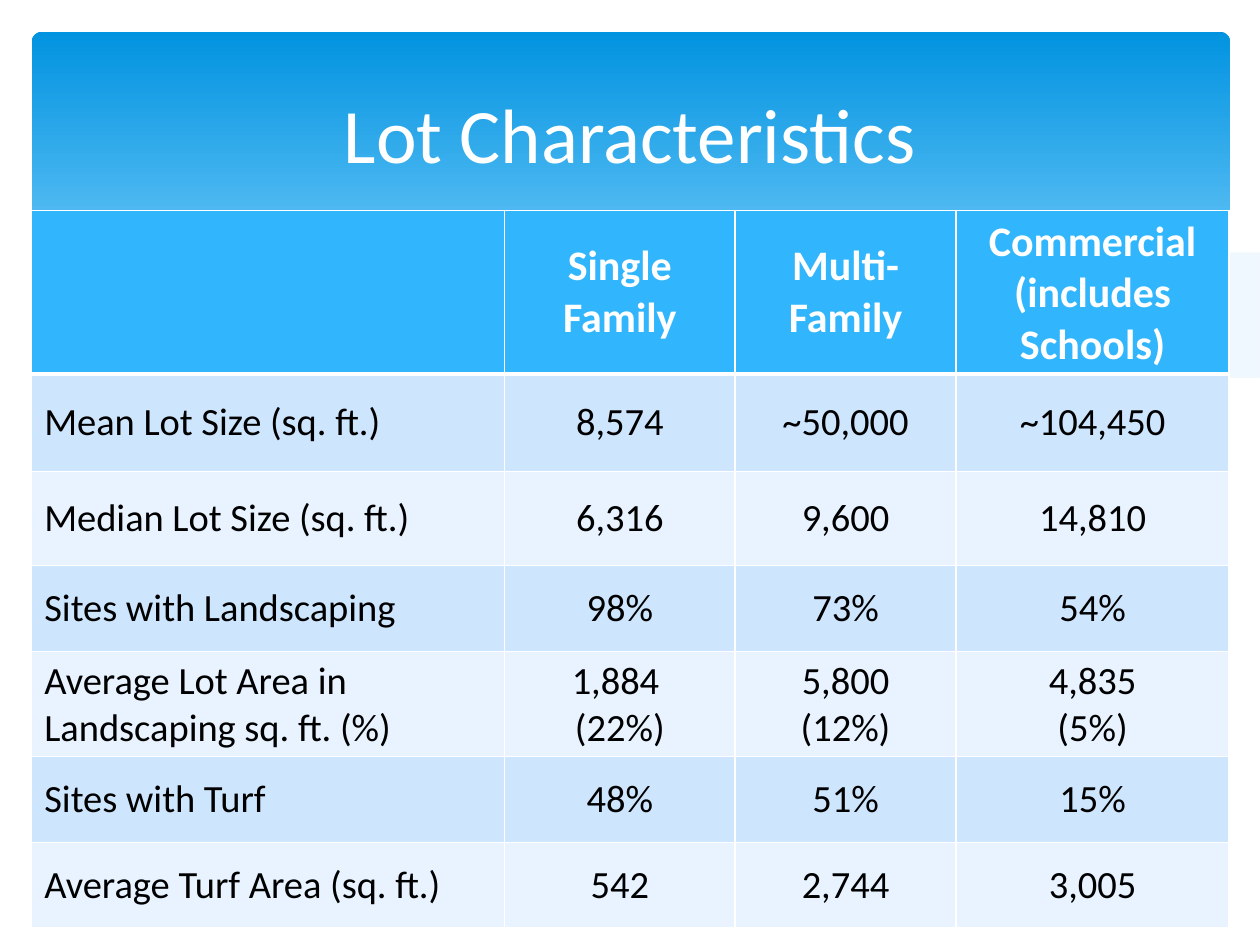
"""Build the Lot Characteristics slide."""
from dataclasses import dataclass
from typing import Optional

import pptx
import pptx.dml.color
import pptx.enum.shapes
import pptx.enum.text
import pptx.oxml
import pptx.oxml.ns
import pptx.util
from lxml import etree

Cm = pptx.util.Cm
Pt = pptx.util.Pt
qn = pptx.oxml.ns.qn
ALIGN = pptx.enum.text.PP_ALIGN
MIDDLE = pptx.enum.text.MSO_ANCHOR.MIDDLE

COLORS = {
    "white": "FFFFFF",
    "black": "000000",
    "banner_top": "0293E0",
    "banner_bottom": "83D3FE",
    "wave": "C6E7FC",
    "header": "31B6FD",
    "band_dark": "CEE5FE",
    "band_light": "E8F3FF",
}
FONT = "Calibri"
WAVE_UNIT = Cm(2.54)


@dataclass
class Wave:
    """An outline in wave units, filled or only stroked."""
    points: list[tuple[float, float]]
    fill: Optional[str] = None
    alpha: int = 100


@dataclass
class RowStyle:
    """The look of one table row."""
    fill: str
    color: str
    size: int
    bold: bool
    top: int
    bottom: int


WAVES = [
    Wave([(9.76, 2), (9.48, 2.04), (9.06, 2.13), (8.61, 2.23), (8.05, 2.37), (7.53, 2.48),
          (7.06, 2.57), (6.61, 2.65), (6.91, 2.69), (7.32, 2.74), (7.69, 2.77), (8.03, 2.78),
          (8.44, 2.77), (8.81, 2.73), (9.13, 2.67), (9.42, 2.59), (9.63, 2.52), (9.76, 2.47)],
         "wave", 29),
    Wave([(8.93, 2.73), (8.37, 2.65), (7.75, 2.54), (7.06, 2.4), (6.29, 2.22), (5.84, 2.11),
          (5.41, 2.03), (5.02, 1.96), (4.65, 1.91), (4.2, 1.87), (3.8, 1.85), (3.44, 1.86),
          (3.13, 1.88), (2.86, 1.91), (3.23, 1.96), (3.62, 2.03), (4.04, 2.11), (4.49, 2.22),
          (5.3, 2.4), (5.84, 2.52), (6.34, 2.61), (6.8, 2.68), (7.22, 2.74), (7.61, 2.77),
          (7.96, 2.78), (8.38, 2.78), (8.67, 2.76)],
         "wave", 40),
    Wave([(3.09, 1.95), (3.28, 1.92), (3.53, 1.89), (3.87, 1.87), (4.33, 1.87), (4.89, 1.9),
          (5.33, 1.94), (5.82, 2), (6.36, 2.08), (6.95, 2.19), (7.6, 2.33), (8.31, 2.51),
          (9.07, 2.72)]),
    Wave([(6.13, 2.57), (6.53, 2.46), (6.95, 2.35), (7.48, 2.23), (8.06, 2.1), (8.66, 1.99),
          (9.1, 1.92), (9.51, 1.87), (9.75, 1.85)]),
    Wave([(9.77, 2.46), (9.5, 2.56), (9.2, 2.65), (8.87, 2.71), (8.5, 2.75), (8.09, 2.77),
          (7.61, 2.75), (7.08, 2.7), (6.48, 2.62), (5.79, 2.5), (5.03, 2.33), (4.47, 2.2),
          (3.91, 2.07), (3.4, 1.97), (2.92, 1.9), (2.5, 1.86), (2.11, 1.84), (1.77, 1.84),
          (1.46, 1.85), (1.19, 1.87), (0.95, 1.91), (0.67, 1.97), (0.46, 2.03), (0.29, 2.1),
          (0.23, 2.13), (0.23, 3.29), (9.77, 3.29)],
         "white"),
]

ROWS = [
    ["", "Single Family", "Multi-Family", "Commercial (includes Schools)"],
    ["Mean Lot Size (sq. ft.)", "8,574", "~50,000", "~104,450"],
    ["Median Lot Size (sq. ft.)", "6,316", "9,600", "14,810"],
    ["Sites with Landscaping", "98%", "73%", "54%"],
    ["Average Lot Area in Landscaping sq. ft. (%)",
     "1,884 \n(22%)", "5,800\n(12%)", "4,835\n(5%)"],
    ["Sites with Turf", "48%", "51%", "15%"],
    ["Average Turf Area (sq. ft.)", "542", "2,744", "3,005"],
]
COL_WIDTHS = [9.53, 4.65, 4.45, 5.51]
ROW_HEIGHTS = [2.26, 1.96, 1.9] + [1.73] * 4


def rgb(name: str) -> pptx.dml.color.RGBColor:
    """Look up a named colour."""
    return pptx.dml.color.RGBColor.from_string(COLORS[name])


def style_paragraph(p, size: int, color: str, align, bold: bool = False) -> None:
    """Set the alignment and font of a paragraph."""
    p.alignment = align
    p.font.name = FONT
    p.font.size = Pt(size)
    p.font.bold = bold
    p.font.color.rgb = rgb(color)


def add_banner(s) -> None:
    """Draw the rounded gradient banner."""
    sp = s.shapes.add_shape(pptx.enum.shapes.MSO_SHAPE.ROUNDED_RECTANGLE,
                            Cm(0.64), Cm(0.64), Cm(24.16), Cm(6.86))
    sp.adjustments[0] = 0.03
    sp.shadow.inherit = False
    sp.line.fill.background()
    sp.fill.gradient()
    sp.fill.gradient_angle = 270
    stops = zip(sp.fill.gradient_stops, ("banner_top", "banner_bottom"), (0, 0.9))
    for stop, color, position in stops:
        stop.color.rgb = rgb(color)
        stop.position = position


def add_wave(s, wave: Wave) -> None:
    """Draw one wave of the banner's lower edge."""
    builder = s.shapes.build_freeform(*wave.points[0], scale=WAVE_UNIT)
    builder.add_line_segments(wave.points[1:], close=wave.fill is not None)
    sp = builder.convert_to_shape()
    sp.shadow.inherit = False
    if wave.fill is None:
        sp.fill.background()
        sp.line.color.rgb = rgb("white")
        sp.line.width = Pt(0)
        return
    sp.line.fill.background()
    sp.fill.solid()
    sp.fill.fore_color.rgb = rgb(wave.fill)
    if wave.alpha < 100:
        color = sp._element.spPr.find(".//" + qn("a:srgbClr"))
        etree.SubElement(color, qn("a:alpha"), val=str(wave.alpha * 1000))


def add_title(s, text: str) -> None:
    """Write the slide title."""
    tf = s.shapes.add_textbox(Cm(1.27), Cm(0.94), Cm(22.86), Cm(3.48)).text_frame
    tf.word_wrap = True
    tf.vertical_anchor = MIDDLE
    tf.text = text
    style_paragraph(tf.paragraphs[0], 44, "white", ALIGN.CENTER)


def set_borders(cell, top: int, bottom: int) -> None:
    """Give a cell white borders."""
    tc_pr = cell._tc.get_or_add_tcPr()
    for side, width in (("L", 1), ("R", 1), ("T", top), ("B", bottom)):
        ln = etree.SubElement(tc_pr, qn(f"a:ln{side}"), w=str(Pt(width)))
        fill = etree.SubElement(ln, qn("a:solidFill"))
        etree.SubElement(fill, qn("a:srgbClr"), val=COLORS["white"])


def fill_cell(cell, text: str, style: RowStyle, align) -> None:
    """Write and style one table cell."""
    set_borders(cell, style.top, style.bottom)
    cell.fill.solid()
    cell.fill.fore_color.rgb = rgb(style.fill)
    cell.vertical_anchor = MIDDLE
    cell.text = text
    for p in cell.text_frame.paragraphs:
        style_paragraph(p, style.size, style.color, align, style.bold)


def row_style(i: int) -> RowStyle:
    """Choose the style of a row by its index."""
    if i == 0:
        return RowStyle("header", "white", 24, True, 1, 3)
    band = "band_dark" if i % 2 else "band_light"
    return RowStyle(band, "black", 22, False, 3 if i == 1 else 1, 1)


def add_lot_table(s) -> None:
    """Draw the table of lot figures."""
    table = s.shapes.add_table(len(ROWS), len(COL_WIDTHS), Cm(0.64), Cm(4.24),
                               Cm(sum(COL_WIDTHS)), Cm(sum(ROW_HEIGHTS))).table
    for col, width in zip(table.columns, COL_WIDTHS):
        col.width = Cm(width)
    for i, (row, height, texts) in enumerate(zip(table.rows, ROW_HEIGHTS, ROWS)):
        row.height = Cm(height)
        for j, (cell, text) in enumerate(zip(row.cells, texts)):
            fill_cell(cell, text, row_style(i), ALIGN.CENTER if j else ALIGN.LEFT)


def main() -> None:
    """Build and save the slide."""
    prs = pptx.Presentation()
    prs.slide_width, prs.slide_height = Cm(25.4), Cm(19.05)
    s = prs.slides.add_slide(prs.slide_layouts[6])
    add_banner(s)
    for wave in WAVES:
        add_wave(s, wave)
    add_title(s, "Lot Characteristics")
    add_lot_table(s)
    prs.save("out.pptx")


if __name__ == "__main__":
    main()
